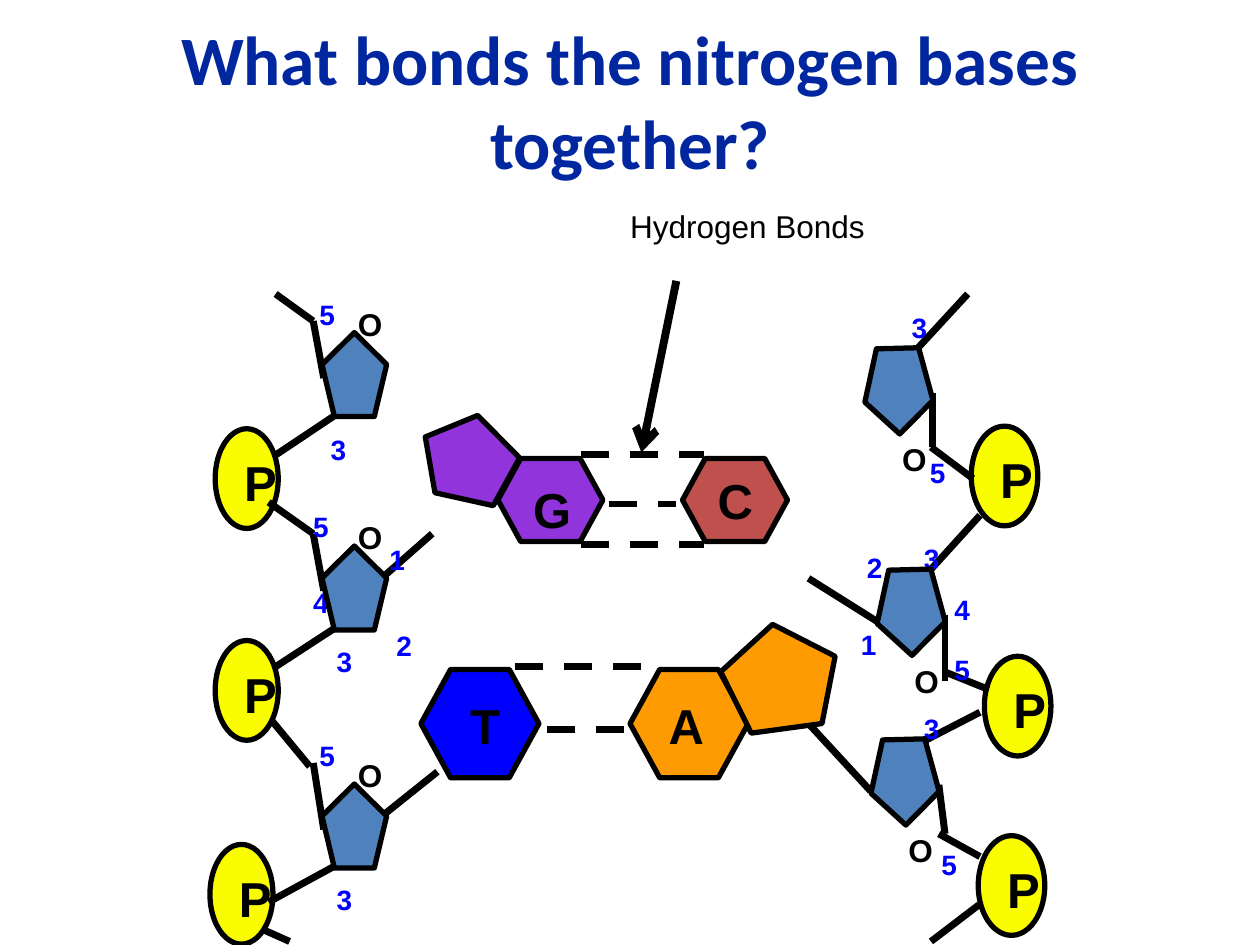
from dataclasses import dataclass
from typing import NamedTuple

from pptx import Presentation
from pptx.dml.color import RGBColor
from pptx.enum.dml import MSO_LINE
from pptx.enum.shapes import MSO_CONNECTOR, MSO_SHAPE
from pptx.enum.text import MSO_ANCHOR, MSO_AUTO_SIZE, PP_ALIGN
from pptx.oxml.ns import qn
from pptx.util import Pt
from lxml.etree import SubElement

COLORS = {
    "title": "00279F",
    "ink": "000000",
    "number": "0000FF",
    "phosphate": "FAFD00",
    "sugar": "4F81BD",
    "guanine": "9234DB",
    "cytosine": "C0504D",
    "adenine": "FE9B03",
    "thymine": "0000FF",
}


class Box(NamedTuple):
    left: float
    top: float
    width: float
    height: float


class Bond(NamedTuple):
    x1: float
    y1: float
    x2: float
    y2: float


class Label(NamedTuple):
    text: str
    left: float
    top: float


@dataclass
class Strand:
    phosphates: list[Box]
    sugars: list[Box]
    sugar_rotation: float
    oxygen_offset: tuple[float, float]
    bonds: list[Bond]
    numbers: list[Label]


@dataclass
class Base:
    color: str
    hexagon: Box
    label: Label
    pentagon: Box | None = None
    rotation: float = 0


@dataclass
class BasePair:
    bases: list[Base]
    hydrogen_bonds: list[Bond]


LEFT_STRAND = Strand(
    phosphates=[Box(x, y, 36, 57) for x, y in [(123, 245), (123, 366), (120, 482.5)]],
    sugars=[Box(184, y, 37, 48) for y in (190, 312, 448)],
    sugar_rotation=0,
    oxygen_offset=(13.5, -19.5),
    bonds=[
        Bond(157.5, 168, 179, 183.5), Bond(185, 216, 179, 183.5),
        Bond(157.5, 260, 192, 237), Bond(153.5, 287, 179, 305),
        Bond(185, 337.5, 179, 305), Bond(217.5, 331, 247, 305),
        Bond(157.5, 381, 192, 358.5), Bond(177, 438, 155.5, 412),
        Bond(185, 474, 179, 436), Bond(217.5, 467, 250, 441),
        Bond(153.5, 515.5, 192, 494.5), Bond(151, 531.5, 165.5, 538),
    ],
    numbers=[
        Label("5", 176.5, 166.5), Label("3", 183, 243.5), Label("5", 173, 287.5),
        Label("1", 216.5, 306.5), Label("4", 173, 331), Label("2", 220.5, 355.5),
        Label("3", 186.5, 365), Label("5", 176.5, 418.5), Label("3", 186.5, 501),
    ],
)

RIGHT_STRAND = Strand(
    phosphates=[Box(x, y, 38, 57) for x, y in [(555, 243.5), (562.5, 375), (559, 477.5)]],
    sugars=[Box(x, y, 39, 49) for x, y in [(494, 199), (501, 325.5), (497.5, 422.5)]],
    sugar_rotation=178.5,
    oxygen_offset=(14.5, 49),
    bonds=[
        Bond(523.5, 200, 553, 168), Bond(533, 224.5, 533, 255.5),
        Bond(556, 273.5, 532, 255.5), Bond(530.5, 327, 560, 294.5),
        Bond(462, 330.5, 501, 355), Bond(540, 351.5, 540, 389),
        Bond(540, 384, 565, 394), Bond(527, 424, 560, 407),
        Bond(462, 413.5, 497.5, 452), Bond(536.5, 448.5, 540, 476.5),
        Bond(536.5, 476.5, 560, 489.5), Bond(559.5, 517, 532, 538),
    ],
    numbers=[
        Label("3", 515, 174), Label("5", 525.5, 257), Label("3", 522, 306),
        Label("2", 489.5, 311), Label("4", 539.5, 335), Label("1", 486, 355),
        Label("5", 539.5, 369.5), Label("3", 522, 403), Label("5", 532, 481),
    ],
)

BASE_PAIRS = [
    BasePair(
        [Base("guanine", Box(284.5, 262, 60, 47.5), Label("G", 297.5, 270.5),
              Box(241, 236, 50.5, 53), 298.9),
         Base("cytosine", Box(390, 262, 60, 47.5), Label("C", 403, 265.5))],
        [Bond(332, 260, 402.5, 260), Bond(348, 288, 386.5, 288), Bond(332, 311, 402.5, 311)],
    ),
    BasePair(
        [Base("thymine", Box(240.5, 382.5, 67.5, 62), Label("T", 261.5, 394)),
         Base("adenine", Box(360, 382.5, 67.5, 62), Label("A", 375, 394),
              Box(412.5, 356.5, 66, 60), 352.3)],
        [Bond(312.5, 417, 362, 417), Bond(294.5, 381, 374.5, 381)],
    ),
]


def rgb(name: str) -> RGBColor:
    return RGBColor.from_string(COLORS[name])


def format_text(text_frame, text: str, *, size: float, color: str = "ink",
                font: str = "Arial", bold: bool = True, align=PP_ALIGN.LEFT) -> None:
    paragraph = text_frame.paragraphs[0]
    paragraph.alignment = align
    run = paragraph.add_run()
    run.text = text
    run.font.name = font
    run.font.size = Pt(size)
    run.font.bold = bold
    run.font.color.rgb = rgb(color)


def add_label(shapes, text: str, box: Box, **text_format) -> None:
    text_frame = shapes.add_textbox(*map(Pt, box)).text_frame
    text_frame.word_wrap = False
    text_frame.auto_size = MSO_AUTO_SIZE.SHAPE_TO_FIT_TEXT
    format_text(text_frame, text, **text_format)


def add_outlined(shapes, kind: MSO_SHAPE, box: Box, color: str, rotation: float = 0):
    shape = shapes.add_shape(kind, *map(Pt, box))
    shape.rotation = rotation
    shape.shadow.inherit = False
    shape.fill.solid()
    shape.fill.fore_color.rgb = rgb(color)
    shape.line.color.rgb = rgb("ink")
    shape.line.width = Pt(3)
    return shape


def add_bond(shapes, bond: Bond, width: float = 4, dashed: bool = False,
             arrow: bool = False) -> None:
    connector = shapes.add_connector(MSO_CONNECTOR.STRAIGHT, *map(Pt, bond))
    connector.line.color.rgb = rgb("ink")
    connector.line.width = Pt(width)
    if dashed:
        connector.line.dash_style = MSO_LINE.DASH
    if arrow:
        SubElement(connector.line._get_or_add_ln(), qn("a:tailEnd"), type="arrow")
    SubElement(connector._element.spPr, qn("a:effectLst"))


def draw_strand(slide, strand: Strand) -> None:
    shapes = slide.shapes.add_group_shape().shapes
    for phosphate in strand.phosphates:
        add_outlined(shapes, MSO_SHAPE.OVAL, phosphate, "phosphate")
    for bond in strand.bonds:
        add_bond(shapes, bond)
    for phosphate in strand.phosphates:
        add_label(shapes, "P", Box(phosphate.left + 9.5, phosphate.top + 10, 19, 33), size=28)
    offset_x, offset_y = strand.oxygen_offset
    for sugar in strand.sugars:
        add_label(shapes, "O", Box(sugar.left + offset_x, sugar.top + offset_y, 16, 23), size=18)
    for number in strand.numbers:
        add_label(shapes, number.text, Box(number.left, number.top, 13, 21),
                  size=16, color="number")
    for sugar in strand.sugars:
        add_outlined(shapes, MSO_SHAPE.REGULAR_PENTAGON, sugar, "sugar", strand.sugar_rotation)


def draw_base_pair(slide, pair: BasePair) -> None:
    shapes = slide.shapes.add_group_shape().shapes
    for base in pair.bases:
        hexagon = add_outlined(shapes, MSO_SHAPE.HEXAGON, base.hexagon, base.color)
        hexagon.adjustments[0] = 0.274
    for bond in pair.hydrogen_bonds:
        add_bond(shapes, bond, dashed=True)
    for base in pair.bases:
        label = base.label
        add_label(shapes, label.text, Box(label.left, label.top, 32, 40), size=28)
        if base.pentagon:
            add_outlined(shapes, MSO_SHAPE.REGULAR_PENTAGON, base.pentagon,
                         base.color, base.rotation)


def main() -> None:
    presentation = Presentation()
    presentation.slide_width, presentation.slide_height = Pt(720), Pt(540)
    slide = presentation.slides.add_slide(presentation.slide_layouts[5])

    title = slide.shapes.title
    title.left, title.top, title.width, title.height = map(Pt, Box(54, 12, 612, 90))
    title.text_frame.vertical_anchor = MSO_ANCHOR.MIDDLE
    title.text_frame.auto_size = MSO_AUTO_SIZE.NONE
    format_text(title.text_frame, "What bonds the nitrogen bases together?", size=39.6,
                color="title", font="Calibri", align=PP_ALIGN.CENTER)

    for strand in (LEFT_STRAND, RIGHT_STRAND):
        draw_strand(slide, strand)
    for pair in BASE_PAIRS:
        draw_base_pair(slide, pair)

    add_bond(slide.shapes, Bond(386.5, 160.5, 366.5, 258.5), width=4.5, arrow=True)
    add_label(slide.shapes, "Hydrogen Bonds", Box(353, 115, 150, 29), size=18, bold=False)
    presentation.save("out.pptx")


if __name__ == "__main__":
    main()
